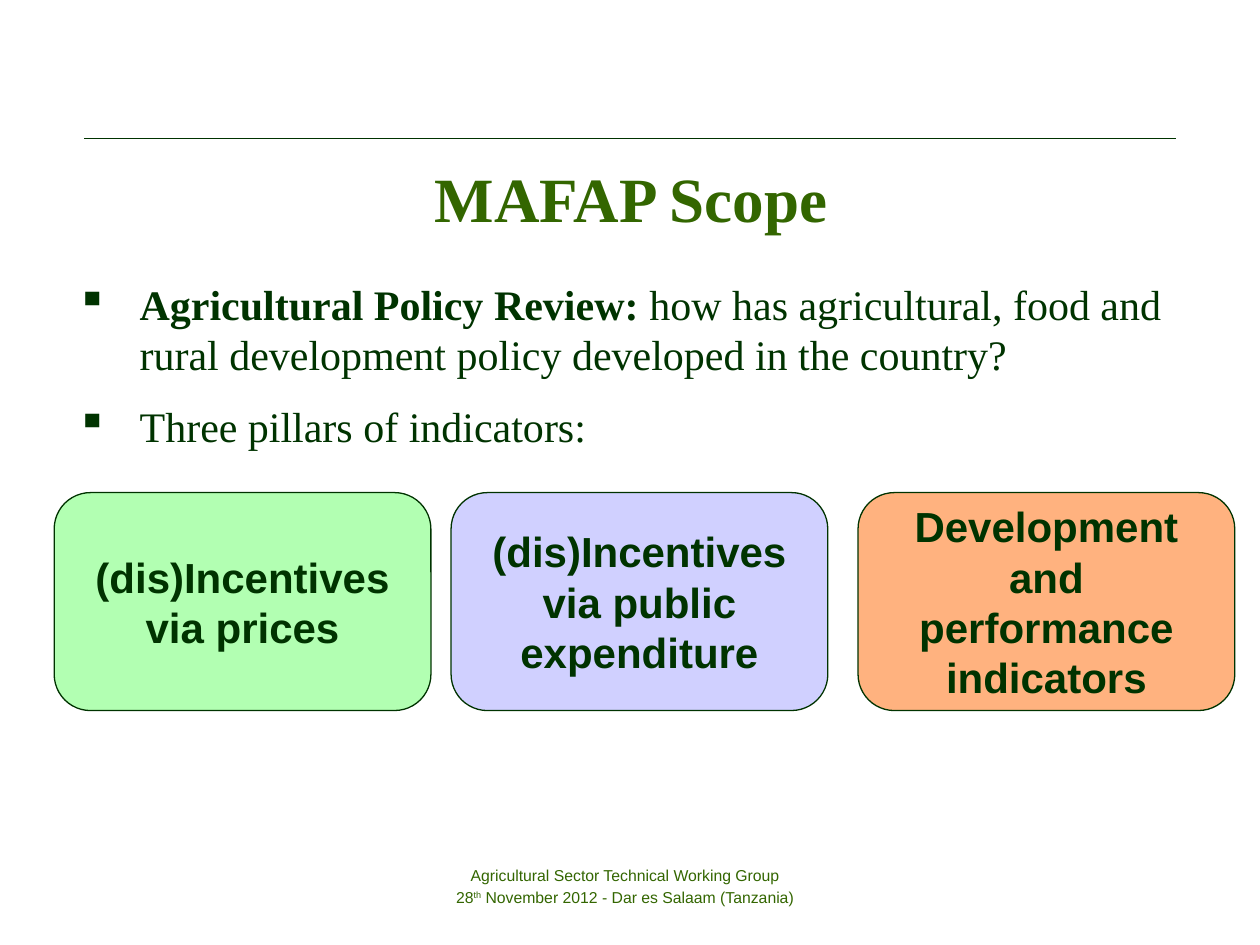
"""Build the MAFAP Scope slide: title, two bullets, three pillars and a footer."""
from lxml.etree import SubElement
from pptx import Presentation
from pptx.dml.color import RGBColor
from pptx.enum.shapes import MSO_CONNECTOR, MSO_SHAPE
from pptx.enum.text import MSO_ANCHOR, MSO_AUTO_SIZE, PP_ALIGN
from pptx.oxml.ns import qn
from pptx.util import Inches, Pt

COLORS = {"dark": "003300", "green": "336600",
          "prices": "66FF66", "spending": "A3A3FF", "performance": "FF6600"}

TITLE = [[("MAFAP Scope", {})]]
BULLETS = [
    [("Agricultural Policy Review:", {"bold": True}),
     (" how has agricultural, food and rural development policy developed in the country?", {})],
    [("Three pillars of indicators:", {})],
]
PILLARS = [
    (0.43, "prices", "(dis)Incentives via prices"),
    (3.58, "spending", "(dis)Incentives via public expenditure"),
    (6.81, "performance", "Development and performance indicators"),
]
PILLAR_TOP, PILLAR_WIDTH, PILLAR_HEIGHT = 3.91, 2.99, 1.73
FOOTER = [
    [("Agricultural Sector Technical Working Group", {})],
    [("28", {}), ("th", {"raised": True}),
     (" November 2012 - Dar es Salaam (Tanzania)", {})],
]

STYLES = {
    "title": {"name": "Times New Roman", "size": Pt(36), "bold": True, "color": "green"},
    "body": {"name": "Times New Roman", "size": Pt(24), "bold": False, "color": "dark"},
    "pillar": {"name": "Arial", "size": Pt(24), "bold": True, "color": "dark"},
    "footer": {"name": "Arial", "size": Pt(9), "bold": False, "color": "green"},
}


def rgb(name):
    return RGBColor.from_string(COLORS[name])


def style_run(r, formats):
    for key, value in formats.items():
        if key == "color":
            r.font.color.rgb = rgb(value)
        elif key == "raised":
            r.font._element.set("baseline", "30000")
        else:
            setattr(r.font, key, value)


def fill_text(s, paragraphs, style, anchor=MSO_ANCHOR.TOP, align=PP_ALIGN.CENTER,
              bullet=None, indent=0, before=0, after=0):
    tf = s.text_frame
    tf.word_wrap = True
    tf.vertical_anchor = anchor
    for i, runs in enumerate(paragraphs):
        p = tf.add_paragraph() if i else tf.paragraphs[0]
        p.alignment = align
        p.space_before = Pt(before if i else 0)
        p.space_after = Pt(after)
        pPr = p._p.get_or_add_pPr()
        if indent:
            pPr.set("marL", str(Inches(indent)))
            pPr.set("indent", str(-Inches(indent)))
        if bullet:
            SubElement(pPr, qn("a:buChar")).set("char", bullet)
        for text, extra in runs:
            r = p.add_run()
            r.text = text
            style_run(r, {**STYLES[style], **extra})
    return tf


def add_text(slide, box, paragraphs, style, **layout):
    s = slide.shapes.add_textbox(*map(Inches, box))
    return fill_text(s, paragraphs, style, **layout)


def add_rule(slide, left, right, y):
    s = slide.shapes.add_connector(MSO_CONNECTOR.STRAIGHT, *map(Inches, (left, y, right, y)))
    s.line.color.rgb = rgb("dark")
    s.line.width = Pt(0.75)
    SubElement(s._element.spPr, qn("a:effectLst"))


def add_pillar(slide, left, color, label):
    box = (left, PILLAR_TOP, PILLAR_WIDTH, PILLAR_HEIGHT)
    s = slide.shapes.add_shape(MSO_SHAPE.ROUNDED_RECTANGLE, *map(Inches, box))
    s.shadow.inherit = False
    s.fill.solid()
    s.fill.fore_color.rgb = rgb(color)
    tint = s._element.spPr.find(qn("a:solidFill")).find(qn("a:srgbClr"))
    SubElement(tint, qn("a:alpha")).set("val", "50000")
    s.line.color.rgb = rgb("dark")
    s.line.width = Pt(0.75)
    fill_text(s, [[(label, {})]], "pillar", anchor=MSO_ANCHOR.MIDDLE)


def main():
    prs = Presentation()
    prs.slide_width, prs.slide_height = Inches(10), Inches(7.5)
    slide = prs.slides.add_slide(prs.slide_layouts[6])
    add_rule(slide, 0.67, 9.33, 1.1)
    tf = add_text(slide, (1.69, 6.82, 6.54, 0.43), FOOTER, "footer", indent=0.38, before=1.8)
    tf.auto_size = MSO_AUTO_SIZE.SHAPE_TO_FIT_TEXT
    add_text(slide, (0.51, 1.19, 9, 0.75), TITLE, "title", anchor=MSO_ANCHOR.MIDDLE)
    add_text(slide, (0.51, 2.16, 9.29, 0.4), BULLETS, "body",
             align=PP_ALIGN.LEFT, bullet="▪", indent=0.5, after=12)
    for pillar in PILLARS:
        add_pillar(slide, *pillar)
    prs.save("out.pptx")


if __name__ == "__main__":
    main()
